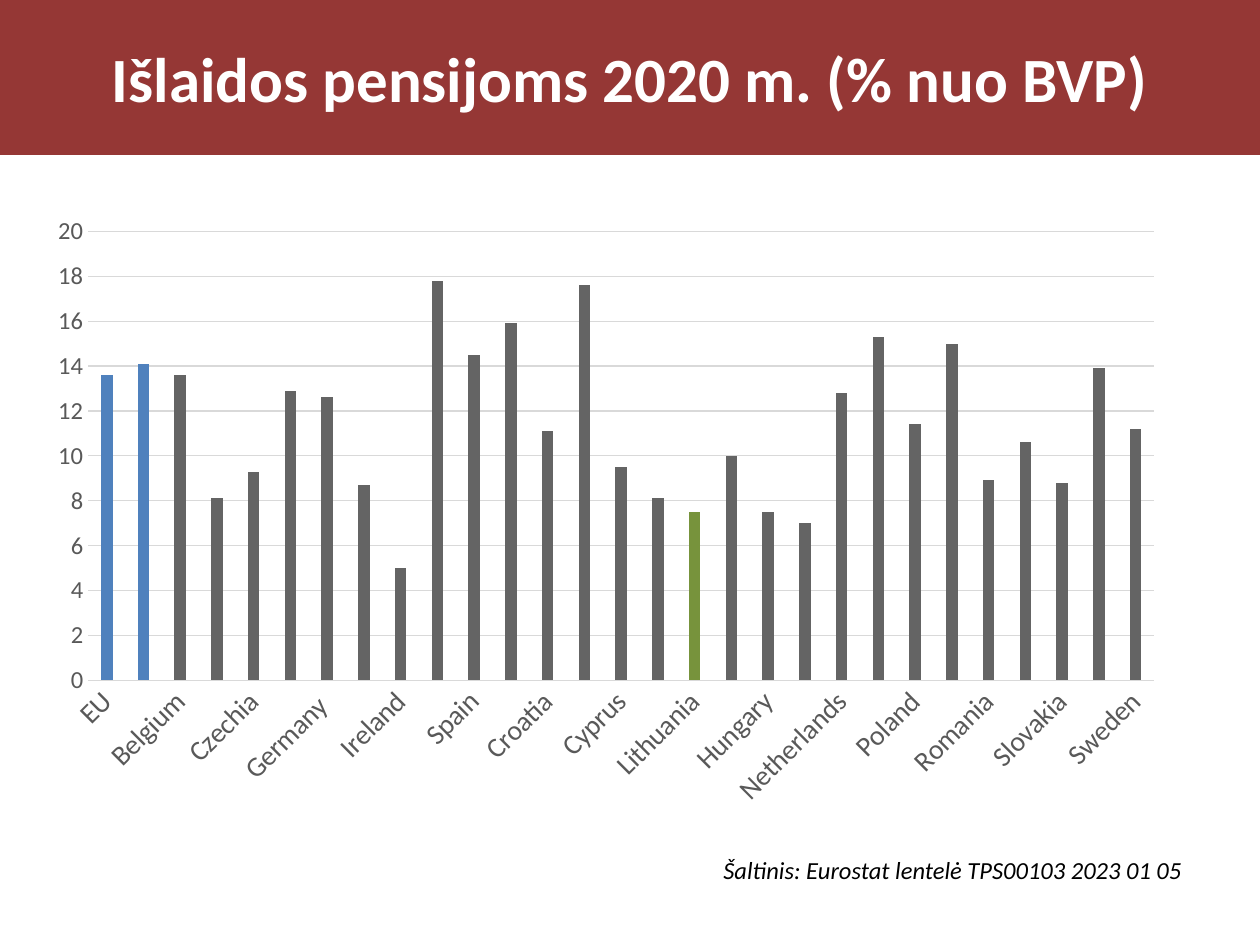
from pptx import Presentation
from pptx.chart.data import CategoryChartData
from pptx.dml.color import RGBColor
from pptx.enum.chart import XL_CHART_TYPE, XL_TICK_MARK
from pptx.enum.shapes import MSO_SHAPE
from pptx.enum.text import MSO_ANCHOR, PP_ALIGN
from pptx.util import Inches, Pt

FONT = "Calibri"
GREY, BLUE, GREEN = "646464", "4F81BD", "77933C"
LABEL, GRID = "595959", "D9D9D9"
MARKS = {"EU": BLUE, "Euro area": BLUE, "Lithuania": GREEN}
SHARES = {
    "EU": 13.6, "Euro area": 14.1, "Belgium": 13.6, "Bulgaria": 8.1,
    "Czechia": 9.3, "Denmark": 12.9, "Germany ": 12.6, "Estonia": 8.7,
    "Ireland": 5, "Greece": 17.8, "Spain": 14.5, "France": 15.9,
    "Croatia": 11.1, "Italy": 17.6, "Cyprus": 9.5, "Latvia": 8.1,
    "Lithuania": 7.5, "Luxembourg": 10, "Hungary": 7.5, "Malta": 7,
    "Netherlands": 12.8, "Austria": 15.3, "Poland": 11.4, "Portugal": 15,
    "Romania": 8.9, "Slovenia": 10.6, "Slovakia": 8.8, "Finland": 13.9,
    "Sweden": 11.2,
}


def paint(fill, color):
    fill.solid()
    fill.fore_color.rgb = RGBColor.from_string(color)


def style(font, color, **form):
    font.color.rgb = RGBColor.from_string(color)
    for key, value in {"name": FONT, **form}.items():
        setattr(font, key, value)


def rule(line, color):
    line.width = Pt(0.75)
    line.color.rgb = RGBColor.from_string(color)


def write(shape, text, align, color, **form):
    frame = shape.text_frame
    frame.word_wrap = True
    para = frame.paragraphs[0]
    para.alignment = align
    run = para.add_run()
    run.text = text
    style(run.font, color, **form)


def add_title(slide, text):
    band = slide.shapes.add_shape(
        MSO_SHAPE.RECTANGLE, 0, 0, Inches(10), Inches(1.23))
    band.shadow.inherit = False
    paint(band.fill, "953735")
    band.line.fill.background()
    band.text_frame.vertical_anchor = MSO_ANCHOR.MIDDLE
    write(band, text, PP_ALIGN.CENTER, "FFFFFF", size=Pt(36), bold=True)


def add_bars(slide):
    data = CategoryChartData()
    data.categories = list(SHARES)
    data.add_series("Series 1", list(SHARES.values()))
    chart = slide.shapes.add_chart(
        XL_CHART_TYPE.COLUMN_CLUSTERED, Inches(0.28), Inches(1.62),
        Inches(9.06), Inches(4.88), data).chart
    chart.has_legend = chart.has_title = False
    style(chart.font, "000000", size=Pt(10))

    plot = chart.plots[0]
    for key, value in {"gap_width": 219, "overlap": -27,
                       "vary_by_categories": False}.items():
        setattr(plot, key, value)
    bars = plot.series[0]
    bars.invert_if_negative = False
    paint(bars.format.fill, GREY)
    for spot, name in enumerate(SHARES):
        if name in MARKS:
            paint(bars.points[spot].format.fill, MARKS[name])
    set_axes(chart)


def set_axes(chart):
    cats, vals = chart.category_axis, chart.value_axis
    for axis, size in ((cats, 16), (vals, 14)):
        axis.major_tick_mark = axis.minor_tick_mark = XL_TICK_MARK.NONE
        style(axis.tick_labels.font, LABEL, size=Pt(size))
    rule(cats.format.line, GRID)
    slant = cats._element.txPr.bodyPr
    slant.set("rot", "-2700000")
    slant.set("vert", "horz")

    vals.minimum_scale, vals.maximum_scale, vals.major_unit = 0, 20, 2
    vals.format.line.fill.background()
    rule(vals.major_gridlines.format.line, GRID)
    vals.tick_labels.number_format = "#,##0.##########"
    vals.tick_labels.number_format_is_linked = True


def add_source(slide, text):
    box = slide.shapes.add_textbox(
        Inches(4.13), Inches(6.74), Inches(5.35), Inches(0.34))
    write(box, text, PP_ALIGN.RIGHT, "000000", size=Pt(14), italic=True)


def main():
    deck = Presentation()
    deck.slide_width, deck.slide_height = Inches(10), Inches(7.5)
    slide = deck.slides.add_slide(deck.slide_layouts[6])
    add_title(slide, "Išlaidos pensijoms 2020 m. (% nuo BVP)")
    add_bars(slide)
    add_source(slide, "Šaltinis: Eurostat lentelė TPS00103 2023 01 05")
    deck.save("out.pptx")


if __name__ == "__main__":
    main()
